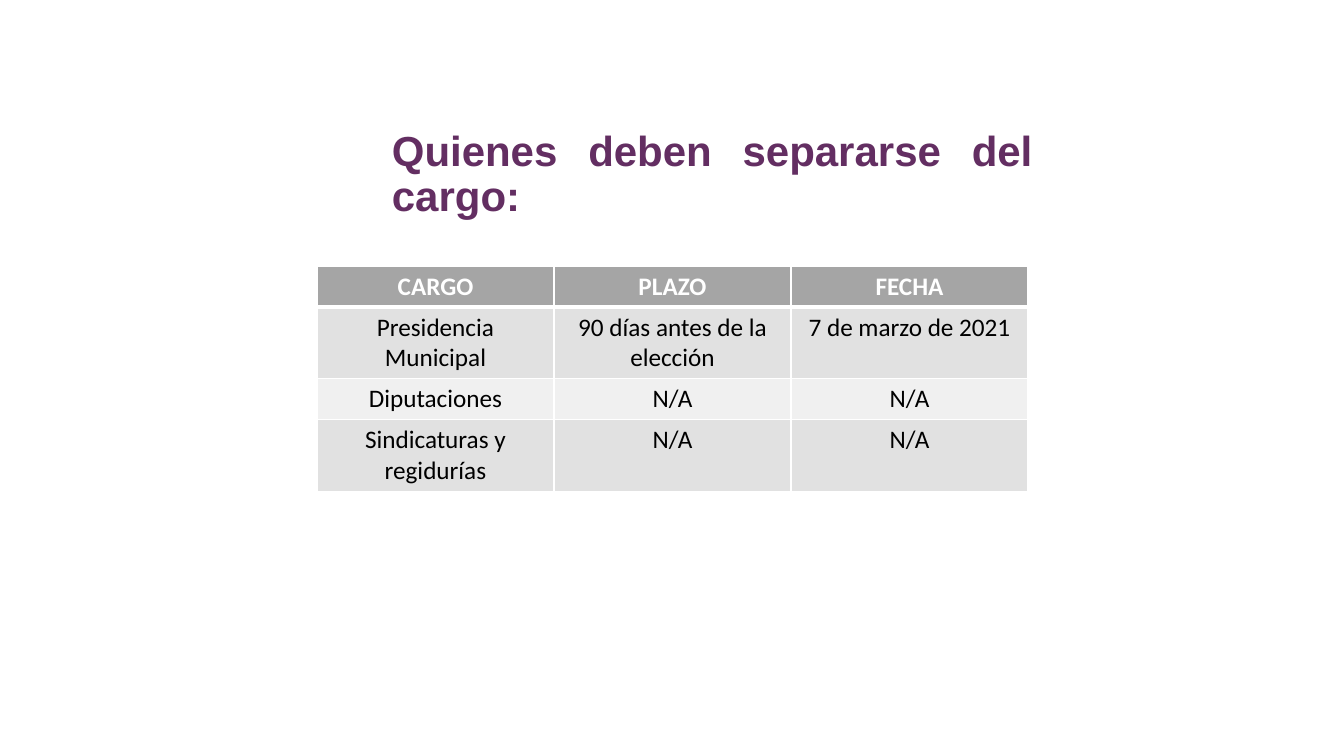
"""Build the slide listing which offices require stepping down, with a title and a table."""
from lxml import etree
from pptx import Presentation
from pptx.dml.color import RGBColor
from pptx.enum.text import MSO_ANCHOR, PP_ALIGN
from pptx.oxml.ns import qn
from pptx.util import Emu, Pt

CENTER = PP_ALIGN.CENTER
JUSTIFY = PP_ALIGN.JUSTIFY
BOTTOM = MSO_ANCHOR.BOTTOM

PURPLE = RGBColor(0x63, 0x2E, 0x62)
WHITE = RGBColor(0xFF, 0xFF, 0xFF)
BLACK = RGBColor(0x00, 0x00, 0x00)
HEADER_GRAY = RGBColor(0xA5, 0xA5, 0xA5)
ODD_GRAY = RGBColor(0xE1, 0xE1, 0xE1)
EVEN_GRAY = RGBColor(0xF0, 0xF0, 0xF0)

PX_PER_INCH = 100.8
COLUMN_WIDTH = 237
ROW_HEIGHTS = [41, 71, 41, 71]
ROWS = [
    ["CARGO", "PLAZO", "FECHA"],
    ["Presidencia Municipal", "90 días antes de la elección", "7 de marzo de 2021"],
    ["Diputaciones", "N/A", "N/A"],
    ["Sindicaturas y regidurías", "N/A", "N/A"],
]


def px(length):
    return Emu(round(length * 914400 / PX_PER_INCH))


def add_border(cell, side, points):
    properties = cell._tc.get_or_add_tcPr()
    line = etree.SubElement(properties, qn(f"a:{side}"), w=str(Pt(points)))
    fill = etree.SubElement(line, qn("a:solidFill"))
    etree.SubElement(fill, qn("a:srgbClr"), val=str(WHITE))


presentation = Presentation()
presentation.slide_width = px(1344)
presentation.slide_height = px(756)
slide = presentation.slides.add_slide(presentation.slide_layouts[6])

table_shape = slide.shapes.add_table(
    len(ROWS), len(ROWS[0]), px(317), px(266),
    px(COLUMN_WIDTH * len(ROWS[0])), px(sum(ROW_HEIGHTS)),
)
table = table_shape.table
for column in table.columns:
    column.width = px(COLUMN_WIDTH)

for row_index, texts in enumerate(ROWS):
    table.rows[row_index].height = px(ROW_HEIGHTS[row_index])
    is_header = row_index == 0
    row_gray = ODD_GRAY if row_index % 2 else EVEN_GRAY
    for column_index, text in enumerate(texts):
        cell = table.cell(row_index, column_index)
        add_border(cell, "lnL", 1)
        add_border(cell, "lnR", 1)
        add_border(cell, "lnT", 3 if row_index == 1 else 1)
        add_border(cell, "lnB", 3 if is_header else 1)
        cell.fill.solid()
        cell.fill.fore_color.rgb = HEADER_GRAY if is_header else row_gray
        paragraph = cell.text_frame.paragraphs[0]
        paragraph.alignment = CENTER
        run = paragraph.add_run()
        run.text = text
        run.font.name = "Calibri"
        run.font.size = Pt(18)
        run.font.bold = is_header
        run.font.color.rgb = WHITE if is_header else BLACK

title = slide.shapes.add_textbox(px(382), px(135), px(661), px(91))
title.text_frame.word_wrap = True
title.text_frame.vertical_anchor = BOTTOM
paragraph = title.text_frame.paragraphs[0]
paragraph.alignment = JUSTIFY
paragraph.line_spacing = 0.9
run = paragraph.add_run()
run.text = "Quienes deben separarse del cargo:"
run.font.name = "Arial"
run.font.size = Pt(30)
run.font.bold = True
run.font.color.rgb = PURPLE

presentation.save("out.pptx")
